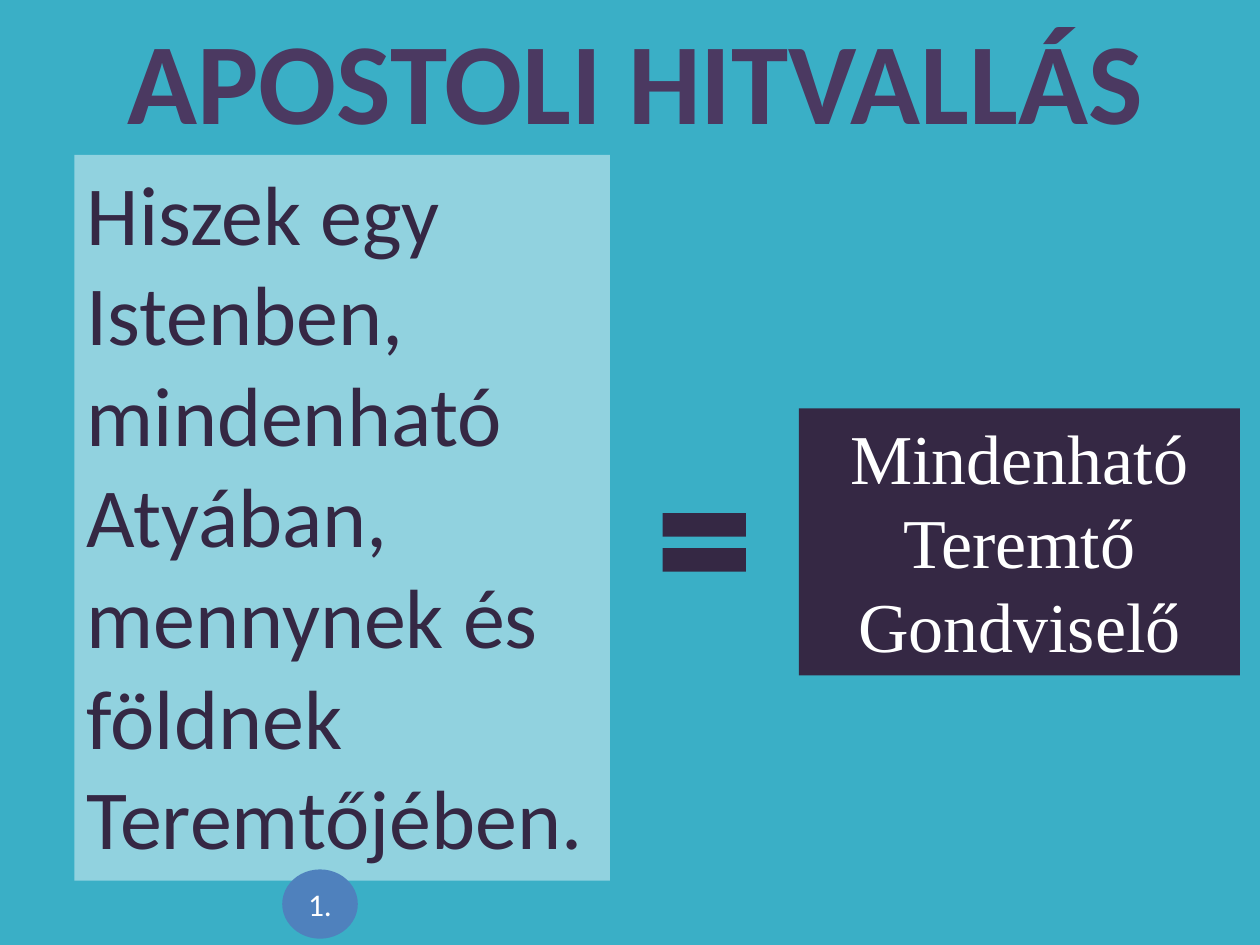
from pptx import Presentation
from pptx.dml.color import RGBColor
from pptx.enum import shapes, text
from pptx.util import Inches, Pt

DARK, WHITE = "352844", "FFFFFF"
KIND = shapes.MSO_SHAPE
MID, LEFT = text.PP_ALIGN.CENTER, text.PP_ALIGN.LEFT

TITLE = ("APOSTOLI HITVALLÁS", (0.28, 0.02, 9.53, 1.21),
         dict(size=66, color="4B3961", bold=True))

# kind, place, fill, lines, text format
PARTS = [
    (KIND.MATH_EQUAL, (5.14, 3.91, 0.9, 0.79), DARK, [], {}),
    (KIND.RECTANGLE, (0.59, 1.23, 4.25, 5.76), "91D2DF",
     ["Hiszek egy Istenben, mindenható Atyában, mennynek és földnek Teremtőjében."],
     dict(size=48, color=DARK, align=LEFT)),
    (KIND.OVAL, (2.24, 6.9, 0.6, 0.55), "4F81BD", ["1."],
     dict(size=18, anchor=text.MSO_ANCHOR.MIDDLE, inset=0)),
    (KIND.RECTANGLE, (6.34, 3.24, 3.5, 2.12), DARK,
     ["Mindenható", "Teremtő", "Gondviselő"],
     dict(size=40, font="Times New Roman")),
]


def paint(fill, color):
    fill.solid()
    fill.fore_color.rgb = RGBColor.from_string(color)


def write(shape, lines, size, color=WHITE, font="Calibri", bold=False,
          align=MID, anchor=text.MSO_ANCHOR.TOP, inset=0.1):
    frame = shape.text_frame
    frame.text = "\n".join(lines)
    frame.word_wrap = True
    frame.auto_size = text.MSO_AUTO_SIZE.NONE
    frame.vertical_anchor = anchor
    frame.margin_left = frame.margin_right = Inches(inset)
    frame.margin_top = frame.margin_bottom = Inches(inset / 2)
    for para in frame.paragraphs:
        para.alignment = align
        face = para.font
        face.name, face.size, face.bold = font, Pt(size), bold
        face.color.rgb = RGBColor.from_string(color)


def main():
    deck = Presentation()
    deck.slide_width, deck.slide_height = Inches(10), Inches(7.5)
    slide = deck.slides.add_slide(deck.slide_layouts[5])
    paint(slide.background.fill, "3AAFC6")

    words, place, style = TITLE
    title = slide.shapes.title
    title.left, title.top, title.width, title.height = map(Inches, place)
    write(title, [words], **style)

    for kind, place, fill, lines, style in PARTS:
        shape = slide.shapes.add_shape(kind, *map(Inches, place))
        shape.shadow.inherit = False
        paint(shape.fill, fill)
        shape.line.fill.background()
        if lines:
            write(shape, lines, **style)

    deck.save("out.pptx")


if __name__ == "__main__":
    main()
